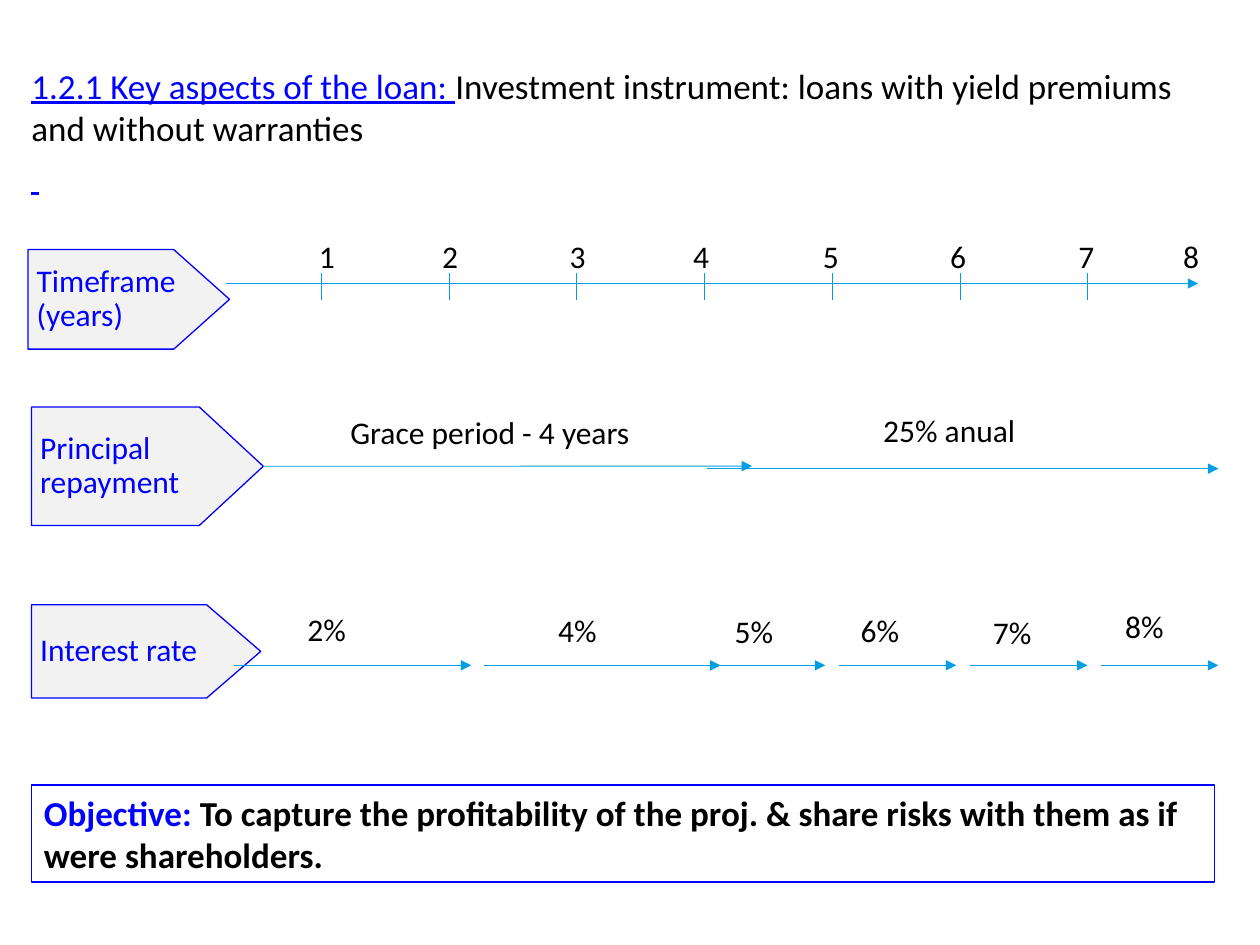
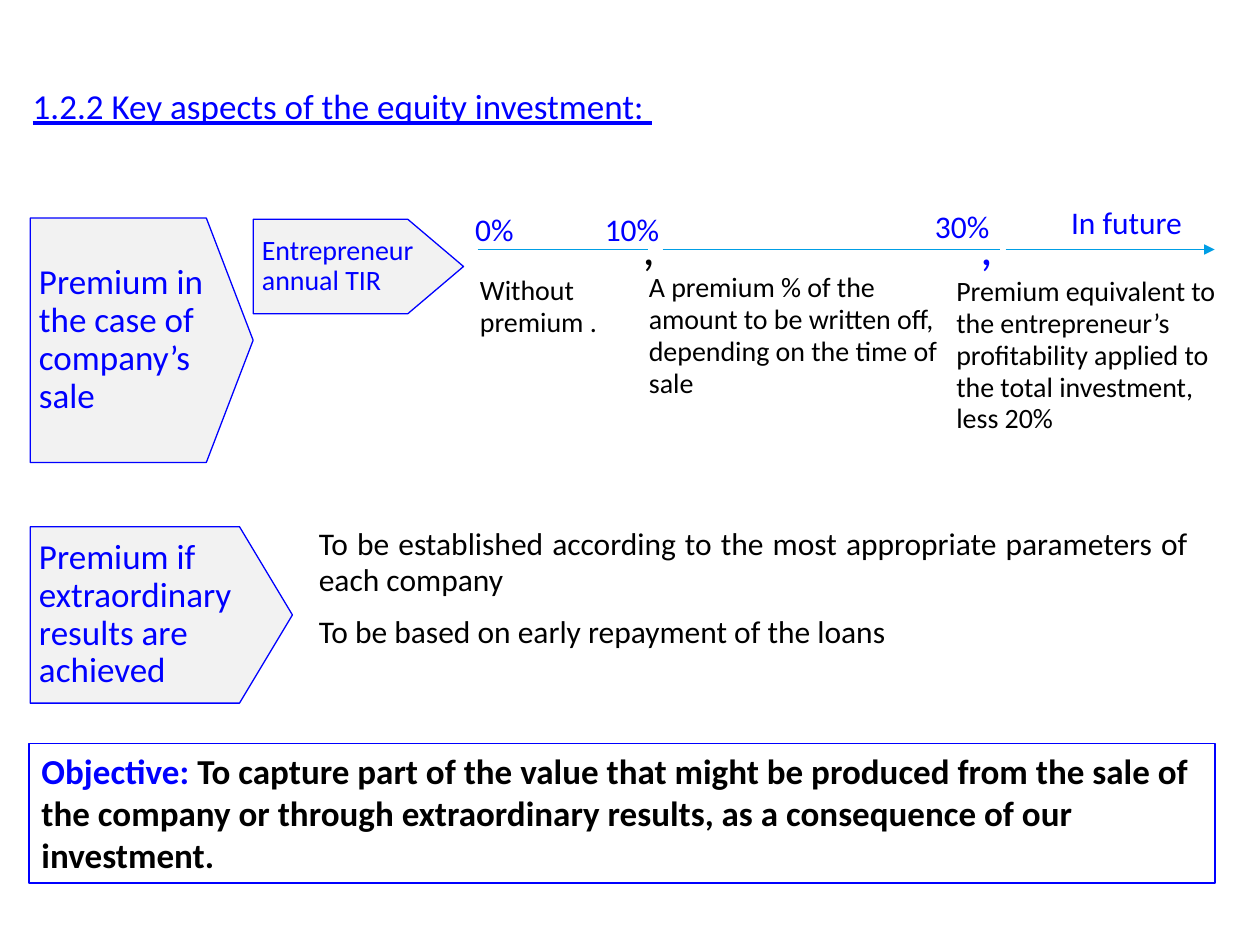
"""Build two slides on the key aspects of a loan and of an equity investment."""
from pptx import Presentation
from pptx.dml.color import RGBColor
from pptx.enum.shapes import MSO_CONNECTOR, MSO_SHAPE
from pptx.enum.text import MSO_ANCHOR, PP_ALIGN
from pptx.oxml.ns import qn
from pptx.util import Pt
from lxml.etree import SubElement

FONT = "Calibri"
BLUE, BLACK, PALE, CYAN = "0000FF", "000000", "F2F2F2", "009EE5"
LABEL_INS = (6.5, 3.6, 6.5, 3.6)
BOX_INS = (7.2, 3.6, 7.2, 3.6)
NO_INS = (0, 0, 0, 0)

LOAN = {
    "title": ((18, 36.7, 665.3, 70.6), [
        [("1.2.1 Key aspects of the loan: ", BLUE, True),
         ("Investment instrument: loans with yield premiums and without warranties", BLACK, False)],
        [(" ", BLUE, True)]]),
    "objective": ((18, 448.6, 676.1, 55.4),
                  "To capture the profitability of the proj. & share risks with them as if were shareholders."),
    "pentagons": [
        ("Timeframe (years)", (16, 142.6, 115.2, 56.9), 0.56, 18),
        ("Principal repayment", (18, 232.6, 132.5, 67.7), 0.54, 18),
        ("Interest rate", (18, 345.6, 131, 53.3), 0.58, 18)],
    "arrows": [(128.9, 684.7, 162), (403.9, 696.2, 267.8)],
}
TICK_LEFT, TICK_STEP, TICK_COUNT, TICK_TOP, TICK_BOTTOM = 183.6, 73, 7, 156.2, 171.4
YEAR_LEFTS = [175.7, 246.2, 319, 389.5, 463.7, 536.4, 609.8, 669.6]
GRACE_END = 429.8
RATE_Y = 380.2
RATE_ARROWS = [(133.9, 269.3), (276.5, 411.8), (404.6, 471.6),
               (479.5, 546.5), (554.4, 621.4), (629.3, 696.2)]
LOAN_LABELS = [
    ("Grace period - 4 years", 193.7, 232.6, 198),
    ("25% anual", 498.2, 231.1, 98),
    ("2%", 169.2, 344.9, 53.3),
    ("4%", 312.5, 345.6, 46.1),
    ("5%", 413.3, 346.3, 54.7),
    ("6%", 485.3, 345.6, 41),
    ("7%", 560.9, 347, 58.3),
    ("8%", 636.5, 343.4, 52.6)]

EQUITY = {
    "title": ((18.7, 48.2, 500.4, 15.8),
              [[("1.2.2 Key aspects of the equity investment: ", BLUE, True)]]),
    "objective": ((16.6, 424.8, 677.5, 79.9),
                  "To capture part of the value that might be produced from the sale of the company "
                  "or through extraordinary results, as a consequence of our investment."),
    "pentagons": [
        ("Premium in the case of company’s sale", (17.3, 124.6, 127.4, 139.7), 0.21, 20),
        ("Entrepreneur annual TIR", (144.7, 125.3, 120.2, 54), 0.59, 16),
        ("Premium if extraordinary results are achieved", (17.3, 301, 149.8, 100.8), 0.3, 20)],
    "arrows": [(574.6, 694.1, 142.6)],
}
RETURN_Y = 142.6
RETURN_LINES = [(272.9, 370.1), (378.7, 571.7)]
RETURN_LABELS = [
    ("0%", 265, 116.6, 39.6),
    ("10%", 339.1, 116.6, 69.8),
    ("30%", 527.8, 114.5, 67.7),
    ("In future", 605.5, 112.3, 95)]
COMMAS = [(360.7, BLACK), (553.7, BLUE)]
PREMIUMS = [
    ("Without premium .", (246.2, 153.4, 109.4, 43.9)),
    ("Premium equivalent to the entrepreneur’s profitability applied to the total investment, less 20%",
     (518.4, 154.1, 192.2, 99.4)),
    ("A premium % of the amount to be written off, depending on the time of sale",
     (342.7, 151.9, 201.6, 81.4))]
RESULTS = [
    ("To be established according to the most appropriate parameters of each company", PP_ALIGN.JUSTIFY),
    ("To be based on early repayment of the loans", PP_ALIGN.LEFT)]


def rgb(value):
    """Turn a hex string into a colour."""
    return RGBColor.from_string(value)


def set_frame(sp, insets, anchor=MSO_ANCHOR.TOP):
    """Prepare the text frame of a shape and return it."""
    tf = sp.text_frame
    tf.word_wrap = True
    tf.vertical_anchor = anchor
    tf.margin_left, tf.margin_top, tf.margin_right, tf.margin_bottom = map(Pt, insets)
    return tf


def add_run(p, text, size, color, bold=False, underline=False):
    """Append a formatted run to a paragraph."""
    r = p.add_run()
    r.text = text
    r.font.name, r.font.size = FONT, Pt(size)
    r.font.bold, r.font.underline = bold, underline
    r.font.color.rgb = rgb(color)


def add_text(s, box, insets):
    """Add a text box and return its frame."""
    return set_frame(s.shapes.add_textbox(*map(Pt, box)), insets)


def add_label(s, text, left, top, width, color=BLACK, size=18):
    """Add a one-line label."""
    tf = add_text(s, (left, top, width, 30), LABEL_INS)
    add_run(tf.paragraphs[0], text, size, color)


def add_shape(s, kind, box, line_width, fill=None):
    """Add a blue-outlined preset shape."""
    sp = s.shapes.add_shape(kind, *map(Pt, box))
    sp.shadow.inherit = False
    if fill:
        sp.fill.solid()
        sp.fill.fore_color.rgb = rgb(fill)
    else:
        sp.fill.background()
    sp.line.color.rgb = rgb(BLUE)
    sp.line.width = Pt(line_width)
    return sp


def add_pentagon(s, text, box, point, size):
    """Add a row heading that points to the right."""
    sp = add_shape(s, MSO_SHAPE.PENTAGON, box, 0.75, PALE)
    sp.adjustments[0] = point
    p = set_frame(sp, (5, 0, 0, 0), MSO_ANCHOR.MIDDLE).paragraphs[0]
    p.alignment, p.line_spacing = PP_ALIGN.LEFT, 0.9
    add_run(p, text, size, BLUE)
    return sp


def add_line(s, x1, y1, x2, y2, arrow=False):
    """Add a thin line, with an arrowhead at its end if asked."""
    c = s.shapes.add_connector(MSO_CONNECTOR.STRAIGHT, *map(Pt, (x1, y1, x2, y2)))
    c.line.color.rgb = rgb(CYAN)
    c.line.width = Pt(0.5)
    if arrow:
        SubElement(c.line._get_or_add_ln(), qn("a:tailEnd"), type="triangle")
    SubElement(c._element.spPr, qn("a:effectLst"))
    return c


def add_page(prs, page):
    """Add a slide with title, pentagons, arrows and objective."""
    s = prs.slides.add_slide(prs.slide_layouts[6])
    box, paragraphs = page["title"]
    tf = add_text(s, box, NO_INS)
    for i, runs in enumerate(paragraphs):
        p = tf.add_paragraph() if i else tf.paragraphs[0]
        p.space_before = Pt(4 if i else 0)
        for text, color, underline in runs:
            add_run(p, text, 20, color, underline=underline)
    pentagons = [add_pentagon(s, *item) for item in page["pentagons"]]
    for x1, x2, y in page["arrows"]:
        add_line(s, x1, y, x2, y, arrow=True)
    box, objective = page["objective"]
    p = set_frame(add_shape(s, MSO_SHAPE.RECTANGLE, box, 1), BOX_INS).paragraphs[0]
    p.alignment = PP_ALIGN.LEFT
    add_run(p, "Objective: ", 20, BLUE, bold=True)
    add_run(p, objective, 20, BLACK, bold=True)
    return s, pentagons


def build_loan(prs):
    """Build the loan timeline."""
    s, (_, principal, _) = add_page(prs, LOAN)
    for i in range(TICK_COUNT):
        x = TICK_LEFT + i * TICK_STEP
        add_line(s, x, TICK_TOP, x, TICK_BOTTOM)
    for year, left in enumerate(YEAR_LEFTS, 1):
        add_label(s, str(year), left, 131.8, 24)
    grace = add_line(s, 150.5, 266.4, GRACE_END, 266.4, arrow=True)
    grace.begin_connect(principal, 3)
    for x1, x2 in RATE_ARROWS:
        add_line(s, x1, RATE_Y, x2, RATE_Y, arrow=True)
    for label in LOAN_LABELS:
        add_label(s, *label)


def build_equity(prs):
    """Build the equity premium scale."""
    s, _ = add_page(prs, EQUITY)
    for x1, x2 in RETURN_LINES:
        add_line(s, x1, RETURN_Y, x2, RETURN_Y)
    for label in RETURN_LABELS:
        add_label(s, *label, color=BLUE)
    for left, color in COMMAS:
        add_label(s, ",", left, 120.2, 24, color, 28)
    for text, box in PREMIUMS:
        tf = add_text(s, box, BOX_INS)
        tf.margin_left = Pt(28.1)
        tf.paragraphs[0].line_spacing = 0.95
        add_run(tf.paragraphs[0], text, 16, BLACK)
    tf = add_text(s, (182.2, 301, 496.8, 58.3), NO_INS)
    for i, (text, align) in enumerate(RESULTS):
        p = tf.add_paragraph() if i else tf.paragraphs[0]
        p.alignment, p.line_spacing = align, 0.95
        p.space_before = Pt(9 if i else 0)
        add_run(p, text, 18, BLACK)


def main():
    """Build and save the presentation."""
    prs = Presentation()
    prs.slide_width, prs.slide_height = Pt(720), Pt(540)
    build_loan(prs)
    build_equity(prs)
    prs.save("out.pptx")


if __name__ == "__main__":
    main()
